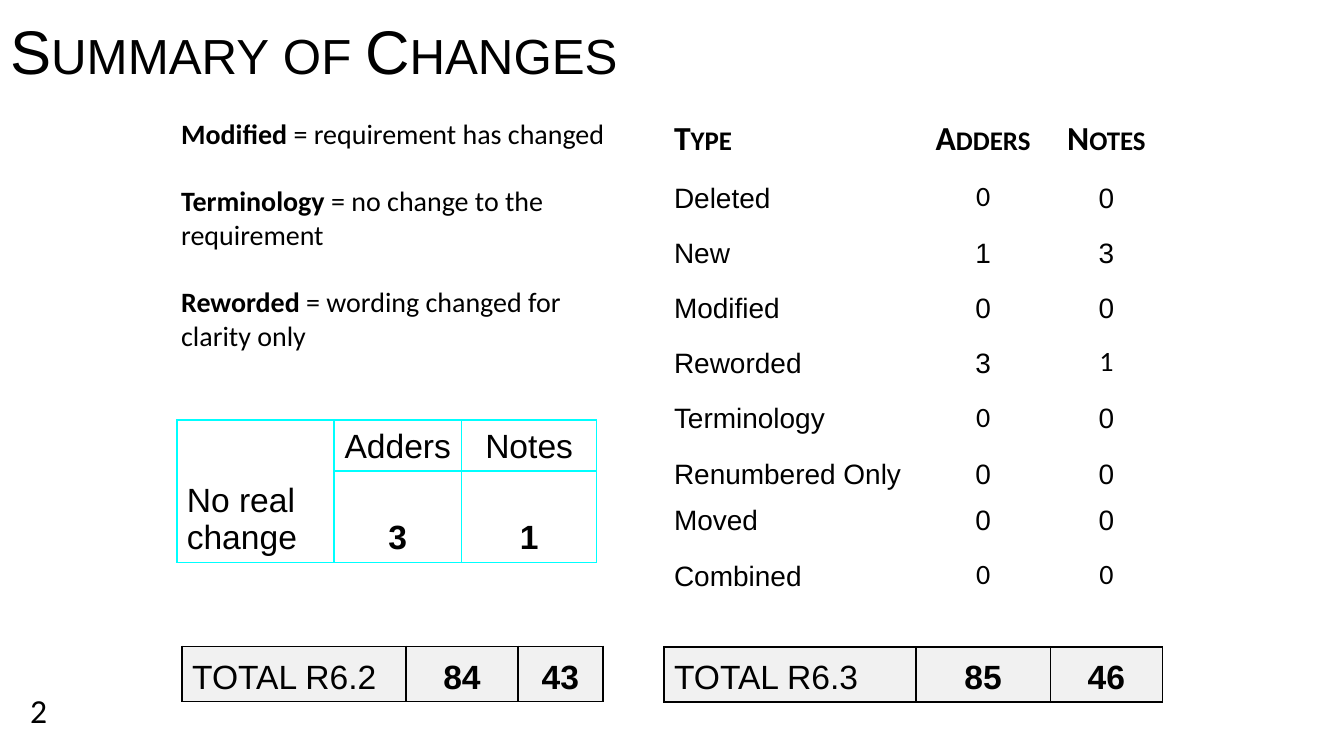
from dataclasses import dataclass

from lxml.etree import SubElement
from pptx import Presentation
from pptx.dml.color import RGBColor
from pptx.enum.text import MSO_ANCHOR, PP_ALIGN
from pptx.oxml.ns import qn
from pptx.util import Pt

PX = 4572


@dataclass(frozen=True)
class Theme:
    ink: str = "000000"
    cyan: str = "00FFFF"
    band: str = "F1F1F1"
    sans: str = "Arial"
    body: str = "Calibri"
    title: int = 33
    large: int = 18
    small: int = 15


T = Theme()


def add_run(para, text, size, font, bold=False, caps=False):
    run = para.add_run()
    run.text = text
    run.font.size = Pt(size)
    run.font.name = font
    run.font.bold = bold
    run.font.color.rgb = RGBColor.from_string(T.ink)
    if caps:
        run.font._element.set("cap", "small")


def add_text(slide, box):
    frame = slide.shapes.add_textbox(*(v * PX for v in box)).text_frame
    frame.word_wrap = True
    return frame


def set_pad(area, side, end):
    area.margin_left = area.margin_right = side * PX
    area.margin_top = area.margin_bottom = end * PX


def add_border(cell, color):
    props = cell._tc.get_or_add_tcPr()
    for side in ("lnL", "lnR", "lnT", "lnB"):
        line = SubElement(props, qn(f"a:{side}"), w=str(Pt(1)))
        fill = SubElement(line, qn("a:solidFill"))
        SubElement(fill, qn("a:srgbClr"), val=color)


def add_grid(slide, left, top, cols, rows, edge=None):
    frame = slide.shapes.add_table(
        len(rows), len(cols), left * PX, top * PX, sum(cols) * PX, sum(rows) * PX
    )
    table = frame.table
    table.first_row = table.horz_banding = False
    for col, width in zip(table.columns, cols):
        col.width = width * PX
    for row, height in zip(table.rows, rows):
        row.height = height * PX
    for cell in table.iter_cells():
        set_pad(cell, 15, 8)
        cell.vertical_anchor = MSO_ANCHOR.BOTTOM
        if edge:
            add_border(cell, edge)
        cell.fill.background()
    return table


def fill_row(table, row, texts, size, fonts, bolds, caps=False):
    for col, (text, font, bold) in enumerate(zip(texts, fonts, bolds)):
        if not text:
            continue
        para = table.cell(row, col).text_frame.paragraphs[0]
        para.alignment = PP_ALIGN.CENTER if col else PP_ALIGN.LEFT
        add_run(para, text, size, font, bold, caps)


def fill_total(table, row, texts):
    fill_row(table, row, texts, T.large, [T.sans] * 3, (False, True, True))
    for col in range(3):
        cell = table.cell(row, col)
        cell._tc.get_or_add_tcPr().remove(cell._tc.tcPr[0])
        add_border(cell, T.ink)
        cell.fill.solid()
        cell.fill.fore_color.rgb = RGBColor.from_string(T.band)


def add_title(slide, box):
    frame = add_text(slide, box)
    set_pad(frame, 15, 8)
    para = frame.paragraphs[0]
    para.line_spacing = 0.9
    add_run(para, "Summary of Changes", T.title, T.sans, caps=True)


def add_terms(slide, box):
    terms = (
        ("Modified", " = requirement has changed"),
        ("Terminology", " = no change to the requirement"),
        ("Reworded", " = wording changed for clarity only"),
    )
    frame = add_text(slide, box)
    for i, (term, gloss) in enumerate(terms):
        para = frame.add_paragraph() if i else frame.paragraphs[0]
        if i:
            para.space_before = Pt(18)
        add_run(para, term, T.small, T.body, True)
        add_run(para, gloss, T.small, T.body)


def add_types(slide, left, top):
    counts = (
        ("Deleted", "0", "0"),
        ("New", "1", "3"),
        ("Modified", "0", "0"),
        ("Reworded", "3", "1"),
        ("Terminology", "0", "0"),
        ("Renumbered Only", "0", "0"),
        ("Moved", "0", "0"),
        ("Combined", "0", "0"),
    )
    body = {(1, 1), (4, 2), (5, 1), (8, 1), (8, 2)}
    rows = [82] * 6 + [83, 69, 82, 74, 82]
    table = add_grid(slide, left, top, (375, 200, 167), rows)
    heads = ("Type", "Adders", "Notes")
    fill_row(table, 0, heads, T.large, [T.body] * 3, [True] * 3, True)
    for row, texts in enumerate(counts, 1):
        fonts = [T.body if (row, col) in body else T.sans for col in range(3)]
        fill_row(table, row, texts, T.small, fonts, [False] * 3)
    for col in range(3):
        set_pad(table.cell(9, col), 15, 0)
    fill_total(table, 10, ("TOTAL R6.3", "85", "46"))


def add_same(slide, left, top):
    table = add_grid(slide, left, top, (234, 190, 201), (75, 75), T.cyan)
    table.cell(0, 0).merge(table.cell(1, 0))
    fonts = [T.sans] * 3
    heads = ("No real change", "Adders", "Notes")
    fill_row(table, 0, heads, T.large, fonts, [False] * 3)
    fill_row(table, 1, ("", "3", "1"), T.large, fonts, [True] * 3)


def add_prior(slide, left, top):
    table = add_grid(slide, left, top, (333, 167, 126), (82,))
    fill_total(table, 0, ("TOTAL R6.2", "84", "43"))


def add_page(slide, box):
    add_run(add_text(slide, box).paragraphs[0], "2", T.large, T.body)


def main():
    deck = Presentation()
    deck.slide_width, deck.slide_height = 2000 * PX, 1125 * PX
    slide = deck.slides.add_slide(deck.slide_layouts[6])
    add_page(slide, (25, 1017, 284, 80))
    add_title(slide, (0, 24, 1238, 138))
    add_types(slide, 988, 163)
    add_terms(slide, (250, 164, 706, 374))
    add_same(slide, 263, 625)
    add_prior(slide, 271, 962)
    deck.save("out.pptx")


if __name__ == "__main__":
    main()
